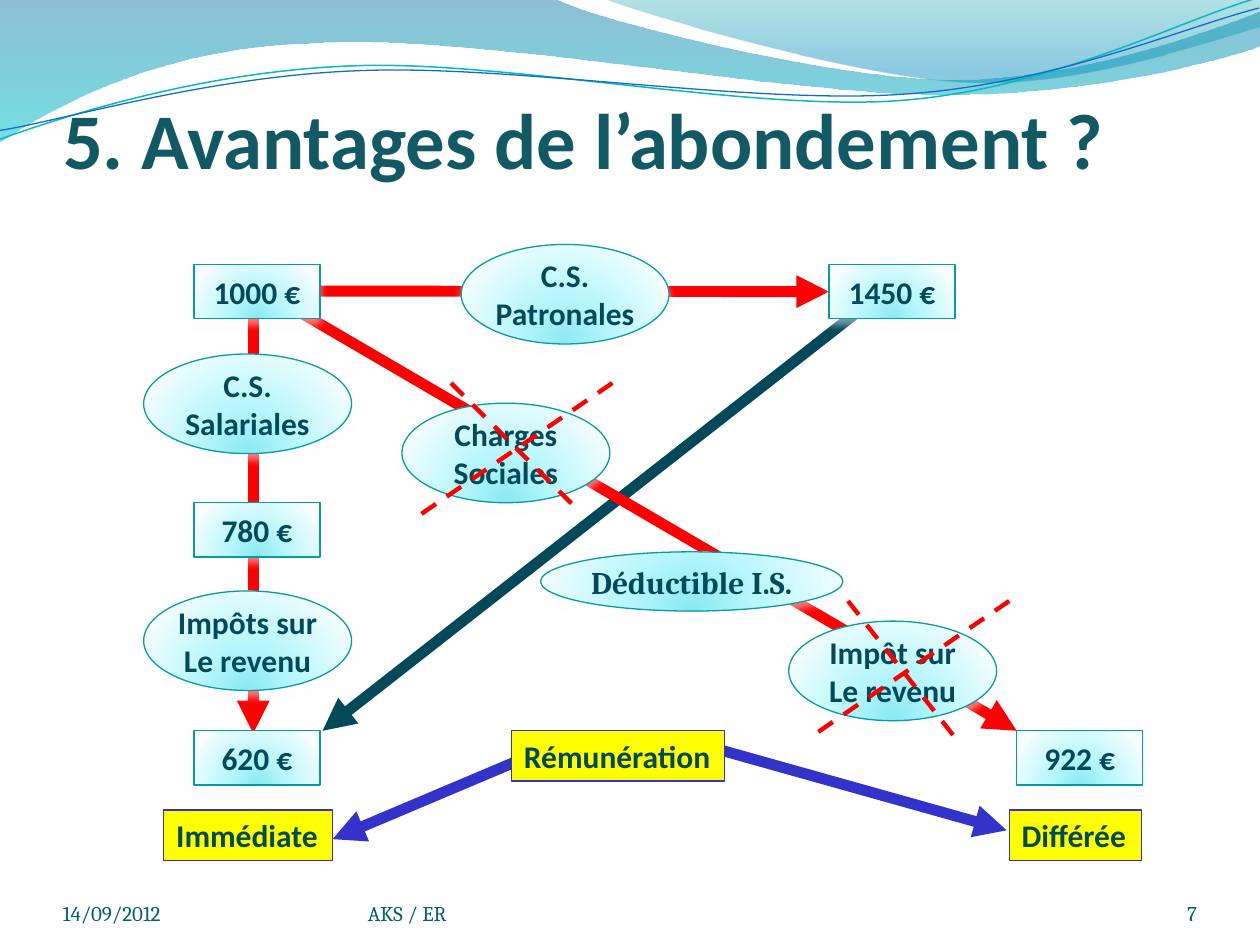
from lxml import etree
from pptx import Presentation
from pptx.dml.color import RGBColor
from pptx.enum.dml import MSO_LINE
from pptx.enum.shapes import MSO_CONNECTOR, MSO_SHAPE
from pptx.enum.text import MSO_ANCHOR, MSO_AUTO_SIZE, PP_ALIGN
from pptx.oxml import parse_xml
from pptx.oxml.ns import nsdecls, qn
from pptx.util import Inches, Pt

PROCESS, OVAL, RECT = MSO_SHAPE.FLOWCHART_PROCESS, MSO_SHAPE.OVAL, MSO_SHAPE.RECTANGLE
STRAIGHT, DASH = MSO_CONNECTOR.STRAIGHT, MSO_LINE.DASH
LEFT, CENTER, RIGHT = PP_ALIGN.LEFT, PP_ALIGN.CENTER, PP_ALIGN.RIGHT
TOP, MIDDLE, BOTTOM = MSO_ANCHOR.TOP, MSO_ANCHOR.MIDDLE, MSO_ANCHOR.BOTTOM

TITLE = RGBColor(0x11, 0x59, 0x64)
INK = RGBColor(0x03, 0x49, 0x5C)
FOOTER = RGBColor(0x04, 0x5D, 0x75)
RED = RGBColor(0xFF, 0x00, 0x00)
BLUE = RGBColor(0x33, 0x33, 0xCC)
YELLOW = RGBColor(0xFF, 0xFF, 0x00)
TEAL = RGBColor(0x06, 0x9C, 0xA3)
WAVE_TEAL = RGBColor(0x0A, 0xB8, 0xBF)
WAVE_BLUE = RGBColor(0x0F, 0x6F, 0xC6)
WAVE_TILT = 357.3

# Gradient stops: position, colour, opacity (all but the colour in percent)
BAND_STOPS = [(0, "0074A1", 45), (100, "00C6CF", 55)]
CORNER_STOPS = [(0, "00A1A9", 30), (80, "008BBF", 45)]
GLOSS_STOPS = [(0, "8BE9F1", 100), (43, "B9F7FD", 100),
               (93, "EAFCFE", 100), (100, "F8FEFF", 100)]
DOWNWARD = '<a:lin ang="5400000" scaled="0"/>'
FROM_BELOW = ('<a:path path="circle"><a:fillToRect l="50000" t="130000" '
              'r="50000" b="-30000"/></a:path>')
SOFT_SHADOW = ('<a:outerShdw %s blurRad="57150" dist="38100" dir="5400000" rotWithShape="0">'
               '<a:srgbClr val="FFFFFF"><a:alpha val="48000"/></a:srgbClr></a:outerShdw>')


def set_gradient(shape, stops, direction):
    gs = "".join(f'<a:gs pos="{pos * 1000}"><a:srgbClr val="{color}">'
                 f'<a:alpha val="{alpha * 1000}"/></a:srgbClr></a:gs>'
                 for pos, color, alpha in stops)
    # The fill follows the transform and the geometry
    shape._element.spPr.insert(2, parse_xml(
        f'<a:gradFill {nsdecls("a")} rotWithShape="1"><a:gsLst>{gs}</a:gsLst>'
        f'{direction}</a:gradFill>'))


def set_text(tf, lines, size, color, font="Calibri", bold=True, align=LEFT, anchor=MIDDLE):
    tf.vertical_anchor = anchor
    for i, line in enumerate(lines):
        p = tf.paragraphs[0] if i == 0 else tf.add_paragraph()
        p.text = line
        p.alignment = align
        p.font.name, p.font.size, p.font.bold = font, Pt(size), bold
        p.font.color.rgb = color


def add_outline(s, start, segments, close):
    """Outline of lines (x, y) and cubic curves (x1, y1, x2, y2, x, y)."""
    builder = s.shapes.build_freeform(Inches(start[0]), Inches(start[1]), scale=1.0)
    for seg in segments:
        builder.add_line_segments([(Inches(x), Inches(y))
                                   for x, y in zip(seg[::2], seg[1::2])], close=False)
    shape = builder.convert_to_shape()
    shape.shadow.inherit = False
    outline = shape._element.spPr.find(".//" + qn("a:path"))
    steps = iter(outline.findall(qn("a:lnTo")))
    for seg in segments:
        first = next(steps)
        if len(seg) == 6:
            # Merge three line steps into one curve with their points
            curve = etree.Element(qn("a:cubicBezTo"))
            outline.replace(first, curve)
            curve.append(first[0])
            for _ in range(2):
                step = next(steps)
                curve.append(step[0])
                outline.remove(step)
    if close:
        etree.SubElement(outline, qn("a:close"))
    return shape


def add_band(s, start, segments, stops):
    shape = add_outline(s, start, segments, True)
    set_gradient(shape, stops, DOWNWARD)
    shape.line.fill.background()


def add_wave(s, start, segments, color, width):
    shape = add_outline(s, start, segments, False)
    shape.rotation = WAVE_TILT
    shape.fill.background()
    shape.line.color.rgb, shape.line.width = color, Pt(width)


def add_line(s, x1, y1, x2, y2, color, width, arrow=False):
    c = s.shapes.add_connector(STRAIGHT, Inches(x1), Inches(y1), Inches(x2), Inches(y2))
    c.line.color.rgb, c.line.width = color, Pt(width)
    spPr = c._element.spPr
    if arrow:
        etree.SubElement(spPr.find(qn("a:ln")), qn("a:tailEnd"), type="triangle")
    etree.SubElement(spPr, qn("a:effectLst"))
    return c


def add_shape(s, kind, x, y, w, h, line_color):
    shape = s.shapes.add_shape(kind, Inches(x), Inches(y), Inches(w), Inches(h))
    shape.shadow.inherit = False
    shape.line.color.rgb, shape.line.width = line_color, Pt(0.75)
    shape.text_frame.word_wrap = False
    return shape


def add_node(s, kind, x, y, w, h, lines, font="Calibri"):
    shape = add_shape(s, kind, x, y, w, h, TEAL)
    set_gradient(shape, GLOSS_STOPS, FROM_BELOW)
    shape._element.spPr.find(qn("a:effectLst")).append(parse_xml(SOFT_SHADOW % nsdecls("a")))
    set_text(shape.text_frame, lines, 18, INK, font, align=CENTER)
    return shape


def add_label(s, x, y, w, text):
    shape = add_shape(s, RECT, x, y, w, 0.4, BLUE)
    shape.fill.solid()
    shape.fill.fore_color.rgb = YELLOW
    set_text(shape.text_frame, [text], 18, INK, anchor=TOP)
    shape.text_frame.auto_size = MSO_AUTO_SIZE.SHAPE_TO_FIT_TEXT


def add_footer(s, x, w, text, align):
    tf = s.shapes.add_textbox(Inches(x), Inches(6.95), Inches(w), Inches(0.4)).text_frame
    tf.word_wrap = True
    tf.margin_left = tf.margin_right = tf.margin_top = tf.margin_bottom = 0
    set_text(tf, [text], 12, FOOTER, "Cambria", False, align, BOTTOM)


def add_waves(s):
    add_band(s, (0, 0), [
        (4.4, -0.01), (4.76, 0.17, 6.64, 0.63, 7.58, 0.63), (8.53, 0.63, 9.58, 0.26, 10, 0.09),
        (10.01, 0.36), (9.83, 0.44, 8.7, 0.76, 7.46, 0.75), (6.22, 0.75, 3.82, 0.28, 2.57, 0.34),
        (1.29, 0.36, 0.46, 0.83, -0.01, 1.13), (0, 0)], BAND_STOPS)
    add_band(s, (4.79, -0.01), [
        (5.09, 0.11, 6.82, 0.62, 7.69, 0.65), (8.56, 0.69, 9.61, 0.32, 10, 0.21),
        (10, 0), (4.79, -0.01)], CORNER_STOPS)
    add_wave(s, (-0.02, 0.87), [
        (0.47, 0.72, 1.58, 0.41, 2.78, 0.42), (3.96, 0.42, 5.91, 0.93, 7.12, 0.9),
        (8.32, 0.87, 9.4, 0.36, 10, 0.22)], WAVE_TEAL, 0.85)
    add_wave(s, (-0.02, 0.8), [
        (0.46, 0.75, 1.64, 0.45, 2.83, 0.46), (4.03, 0.46, 5.96, 0.88, 7.16, 0.85),
        (8.35, 0.83, 9.42, 0.42, 10.01, 0.3)], WAVE_BLUE, 0.75)


def add_title(s, text):
    title = s.shapes.title
    title.left, title.top, title.width, title.height = map(Inches, (0.5, 0.77, 9, 0.7))
    tf = title.text_frame
    tf.margin_left = tf.margin_right = tf.margin_bottom = 0
    tf.auto_size = MSO_AUTO_SIZE.NONE
    set_text(tf, [text], 45, TITLE, anchor=BOTTOM)


def main():
    prs = Presentation()
    prs.slide_width, prs.slide_height = Inches(10), Inches(7.5)
    s = prs.slides.add_slide(prs.slide_layouts[5])
    add_waves(s)
    add_title(s, "5. Avantages de l’abondement ?")

    # Money flows, behind the amounts and levies
    add_line(s, 6.89, 2.41, 2.56, 5.8, INK, 6.25, True)
    employer_flow = add_line(s, 2.4, 2.31, 6.58, 2.31, RED, 6.25, True)
    add_line(s, 2.01, 2.49, 2.01, 5.82, RED, 6.25, True)
    add_line(s, 2.4, 2.49, 8.07, 5.8, RED, 6.25, True)

    # Amounts
    amounts = {text: add_node(s, PROCESS, x, y, 1, 0.43, [text]) for x, y, text in (
        (1.54, 2.1, "1000 €"), (6.58, 2.1, "1450 €"), (1.54, 3.99, "780 €"),
        (1.54, 5.8, "620 €"), (8.07, 5.8, "922 €"))}
    employer_flow.end_connect(amounts["1450 €"], 1)

    # Levies
    for x, y, *lines in ((1.14, 2.81, "C.S.", "Salariales"),
                         (1.14, 4.69, "Impôts sur", "Le revenu"),
                         (3.66, 1.94, "C.S.", "Patronales"),
                         (3.19, 3.2, "Charges", "Sociales"),
                         (6.26, 4.93, "Impôt sur", "Le revenu")):
        add_node(s, OVAL, x, y, 1.65, 0.79, lines)
    add_node(s, OVAL, 4.29, 4.38, 2.4, 0.47, ["Déductible I.S."], "Cambria")

    # Kinds of pay
    add_line(s, 4.13, 6.03, 2.64, 6.66, BLUE, 6.25, True)
    add_line(s, 5.71, 5.95, 7.99, 6.59, BLUE, 6.25, True)
    add_label(s, 4.06, 5.8, 1.69, "Rémunération")
    add_label(s, 1.3, 6.43, 1.34, "Immédiate")
    add_label(s, 8.01, 6.43, 1.05, "Différée")

    # Strokes through the levies that do not apply
    for ends in ((6.73, 4.77, 7.6, 5.88), (8.01, 4.77, 6.42, 5.86),
                 (3.58, 3.04, 4.58, 4.04), (4.86, 3.04, 3.27, 4.13)):
        add_line(s, *ends, RED, 2.5).line.dash_style = DASH

    # Footer
    add_footer(s, 8.67, 0.83, "7", RIGHT)
    add_footer(s, 2.92, 3.67, "AKS / ER", LEFT)
    add_footer(s, 0.5, 2.33, "14/09/2012", LEFT)
    prs.save("out.pptx")


if __name__ == "__main__":
    main()
